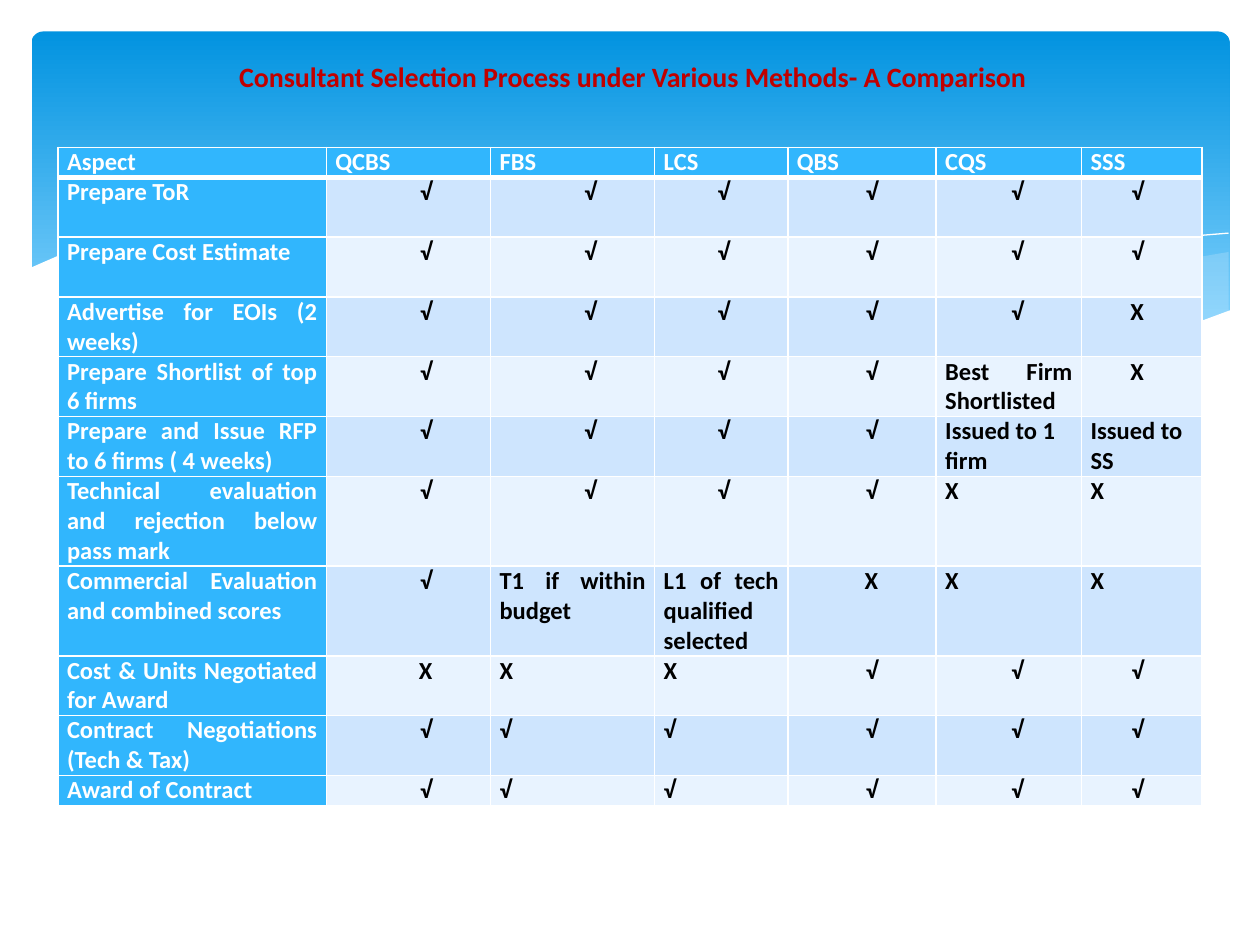
from dataclasses import dataclass
from typing import Optional

from lxml import etree
from pptx import Presentation
from pptx import util as u
from pptx.dml.color import RGBColor
from pptx.enum import shapes, text
from pptx.oxml import ns

Pt = u.Pt
ALIGN = text.PP_ALIGN
WHITE, BLACK, RED = "FFFFFF", "000000", "C00000"
HEADER_BLUE, BANDS, WAVE_BLUE = "31B6FD", ("CEE5FE", "E8F3FF"), "C6E7FC"
LINE_HEIGHT = 17.1
MARK_INDENT = 28


@dataclass(frozen=True)
class Entry:
    text: str
    align: ALIGN = ALIGN.JUSTIFY
    indent: float = 0


@dataclass(frozen=True)
class Stage:
    aspect: str
    lines: int
    entries: tuple[Entry, ...]


@dataclass(frozen=True)
class Wave:
    points: tuple[tuple[float, float], ...]
    fill: Optional[str] = None
    opacity: int = 100


TICK = Entry("√", ALIGN.RIGHT, MARK_INDENT)
CROSS = Entry("X", ALIGN.RIGHT, MARK_INDENT)
LEFT_TICK, LEFT_CROSS = Entry("√"), Entry("X")

METHODS = ("QCBS", "FBS", "LCS", "QBS", "CQS", "SSS")
COLUMN_WIDTHS = (153.4, 93.8, 93.8, 76.1, 84.8, 83.1, 68.8)
STAGES = (
    Stage("Prepare ToR", 2, (TICK,) * 6),
    Stage("Prepare Cost Estimate", 2, (TICK,) * 6),
    Stage("Advertise for EOIs (2 weeks)", 2, (TICK,) * 5 + (CROSS,)),
    Stage("Prepare Shortlist of top 6 firms", 2,
          (TICK,) * 4 + (Entry("Best Firm Shortlisted"), CROSS)),
    Stage("Prepare and Issue RFP to 6 firms ( 4 weeks)", 2,
          (TICK,) * 4 + (Entry("Issued to 1 firm", ALIGN.LEFT), Entry("Issued to SS", ALIGN.LEFT))),
    Stage("Technical evaluation and rejection below pass mark", 3,
          (TICK,) * 4 + (LEFT_CROSS,) * 2),
    Stage("Commercial Evaluation and combined scores", 3,
          (TICK, Entry("T1 if within budget"), Entry("L1 of tech qualified selected"),
           CROSS, LEFT_CROSS, LEFT_CROSS)),
    Stage("Cost & Units Negotiated for Award", 2,
          (CROSS, LEFT_CROSS, LEFT_CROSS) + (TICK,) * 3),
    Stage("Contract Negotiations (Tech & Tax)", 2,
          (TICK, LEFT_TICK, LEFT_TICK) + (TICK,) * 3),
    Stage("Award of Contract", 1, (TICK, LEFT_TICK, LEFT_TICK) + (TICK,) * 3),
)

WAVES = (
    Wave(((702, 144), (673, 149), (641.5, 155.5), (620, 160.6), (579.6, 170.6), (542, 178.6),
          (508, 185), (476, 190.8), (497.5, 193.7), (527, 197.3), (562, 199.4), (593, 199.4),
          (621, 198), (646, 194.4), (668, 189.4), (683, 185), (702, 177.8)), WAVE_BLUE, 29),
    Wave(((643, 196.6), (602.6, 190.8), (558, 182.9), (508.3, 172.8), (452.9, 159.8),
          (420.5, 151.9), (389.5, 146.2), (352, 139.7), (318.2, 136), (287.3, 133.9),
          (260, 133.2), (236, 134.6), (206, 137.5), (246.2, 143.3), (290.9, 151.9),
          (323.3, 159.8), (381.6, 172.8), (432.7, 183.6), (478.8, 191.5), (519.8, 197.3),
          (556.6, 199.4), (589, 200.2), (617, 199.4)), WAVE_BLUE, 40),
    Wave(((222.5, 140.4), (247.7, 136.8), (278.6, 134.6), (311.8, 134.6), (352, 136.8),
          (400.3, 141.8), (457.9, 149.8), (523.4, 162.7), (598.3, 180.7), (653, 195.8))),
    Wave(((441.4, 185), (483.8, 173.5), (518.4, 164.9), (558.7, 155.5), (602, 146.9),
          (644.4, 139.7), (675.4, 135.4), (702, 133.2))),
    Wave(((703.4, 177.1), (684, 184.3), (662.4, 190.8), (638.6, 195.1), (612, 198),
          (582.5, 199.4), (547.9, 198), (509.8, 194.4), (466.6, 188.6), (416.9, 180),
          (362.2, 167.8), (321.8, 158.4), (262.8, 145.4), (210.2, 136.8), (165.6, 133.2),
          (127.4, 132.5), (95, 133.9), (68.4, 137.5), (48.2, 141.8), (33.1, 146.2),
          (16.6, 153.4), (16.6, 236.9), (703.4, 236.9)), WHITE),
)


def paint(color_format, color: str) -> None:
    color_format.rgb = RGBColor.from_string(color)


def paint_solid(fill, color: str) -> None:
    fill.solid()
    paint(fill.fore_color, color)


def write(frame, content: str, *, size: float = 14, color: str = BLACK,
          align: ALIGN = ALIGN.JUSTIFY, indent: float = 0) -> None:
    paragraph = frame.paragraphs[0]
    paragraph.alignment = align
    if indent:
        paragraph._p.get_or_add_pPr().set("marR", str(Pt(indent)))
    run = paragraph.add_run()
    run.text = content
    run.font.name, run.font.size, run.font.bold = "Calibri", Pt(size), True
    paint(run.font.color, color)


def draw_banner(slide) -> None:
    banner = slide.shapes.add_shape(
        shapes.MSO_SHAPE.ROUNDED_RECTANGLE, Pt(18), Pt(18), Pt(684.7), Pt(194.4))
    banner.adjustments[0] = 0.034
    banner.shadow.inherit = False
    banner.line.fill.background()
    banner.fill.gradient()
    banner.fill.gradient_angle = 270
    for stop, position, color in zip(banner.fill.gradient_stops, (0, 0.9), ("0293E0", "83D3FE")):
        stop.position = position
        paint(stop.color, color)


def draw_wave(slide, wave: Wave) -> None:
    start, *rest = [(Pt(x), Pt(y)) for x, y in wave.points]
    builder = slide.shapes.build_freeform(*start)
    builder.add_line_segments(rest, close=wave.fill is not None)
    curve = builder.convert_to_shape()
    curve.shadow.inherit = False
    if wave.fill is None:
        curve.fill.background()
        paint(curve.line.color, WHITE)
        curve.line.width = Pt(0)
        return
    curve.line.fill.background()
    paint_solid(curve.fill, wave.fill)
    if wave.opacity < 100:
        color = curve.element.spPr.find(".//" + ns.qn("a:srgbClr"))
        etree.SubElement(color, ns.qn("a:alpha"), val=str(wave.opacity * 1000))


def draw_border(cell, side: str, width: float) -> None:
    line = etree.SubElement(cell._tc.get_or_add_tcPr(), ns.qn(f"a:{side}"), w=str(Pt(width)))
    solid = etree.SubElement(line, ns.qn("a:solidFill"))
    etree.SubElement(solid, ns.qn("a:srgbClr"), val=WHITE)


def fill_cell(cell, entry: Entry, fill: str, color: str, top: float, bottom: float) -> None:
    cell.margin_left = cell.margin_right = Pt(5.2)
    cell.margin_top = cell.margin_bottom = Pt(0)
    for side, width in (("lnL", 1), ("lnR", 1), ("lnT", top), ("lnB", bottom)):
        draw_border(cell, side, width)
    paint_solid(cell.fill, fill)
    write(cell.text_frame, entry.text, color=color, align=entry.align, indent=entry.indent)


def draw_comparison(slide) -> None:
    header = Stage("Aspect", 1, tuple(Entry(method) for method in METHODS))
    stages = (header, *STAGES)
    height = LINE_HEIGHT * sum(stage.lines for stage in stages)
    comparison = slide.shapes.add_table(
        len(stages), len(COLUMN_WIDTHS), Pt(33.1), Pt(84.2),
        Pt(sum(COLUMN_WIDTHS)), Pt(height)).table
    comparison.first_col = True
    for column, width in zip(comparison.columns, COLUMN_WIDTHS):
        column.width = Pt(width)
    for r, stage in enumerate(stages):
        comparison.rows[r].height = Pt(LINE_HEIGHT * stage.lines)
        for c, entry in enumerate((Entry(stage.aspect), *stage.entries)):
            heading = r == 0 or c == 0
            fill_cell(comparison.cell(r, c), entry,
                      HEADER_BLUE if heading else BANDS[(r - 1) % 2],
                      WHITE if heading else BLACK,
                      top=3 if r == 1 else 1, bottom=3 if r == 0 else 1)


def place_title(slide) -> None:
    title = slide.shapes.title
    title.left, title.top, title.width, title.height = Pt(126), Pt(30.2), Pt(468), Pt(26.6)
    frame = title.text_frame
    frame.word_wrap = True
    frame.auto_size = text.MSO_AUTO_SIZE.SHAPE_TO_FIT_TEXT
    frame.vertical_anchor = text.MSO_ANCHOR.MIDDLE
    write(frame, "Consultant Selection Process under Various Methods- A Comparison",
          size=16, color=RED, align=ALIGN.RIGHT)
    title.element.getparent().append(title.element)


def main() -> None:
    deck = Presentation()
    deck.slide_width, deck.slide_height = Pt(720), Pt(540)
    slide = deck.slides.add_slide(deck.slide_layouts[5])
    draw_banner(slide)
    for wave in WAVES:
        draw_wave(slide, wave)
    draw_comparison(slide)
    place_title(slide)
    deck.save("out.pptx")


if __name__ == "__main__":
    main()
